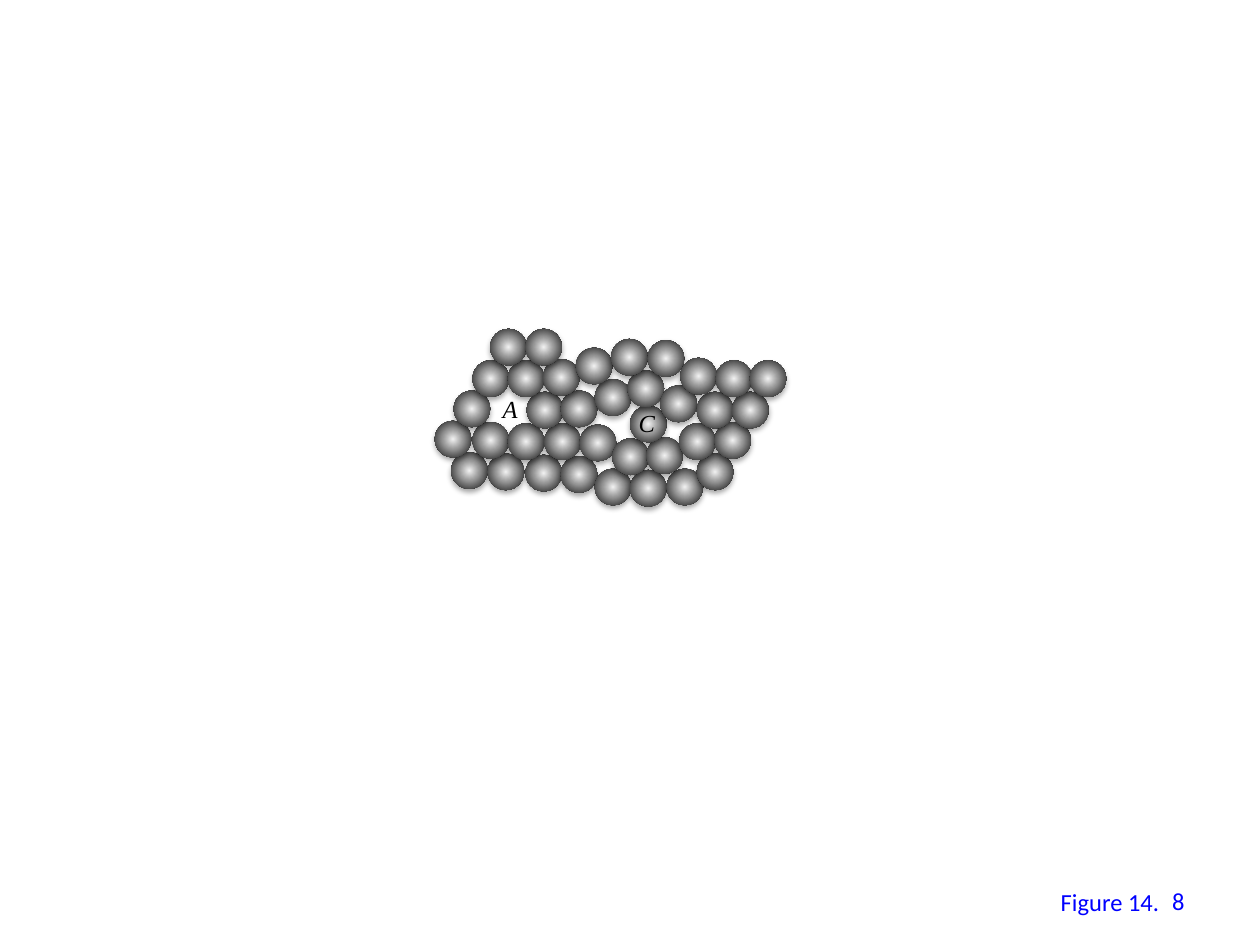
from lxml.etree import SubElement
from pptx import Presentation
from pptx.dml.color import RGBColor
from pptx.enum.shapes import MSO_SHAPE
from pptx.enum.text import MSO_ANCHOR, MSO_AUTO_SIZE, PP_ALIGN
from pptx.oxml.ns import qn
from pptx.util import Inches, Pt

COLORS = {"center": "F2F2F2", "rim": "0D0D0D", "shadow": "000000",
          "letter": "000000", "caption": "0000FF"}
ATOM_SIZE = 0.29

# Left and top of each atom, column by column, from bottom to top
ATOM_COLUMNS = [
    [(3.58, 3.59), (3.45, 3.34)],
    [(3.87, 3.6), (3.75, 3.35), (3.6, 3.1)],
    [(4.17, 3.61), (4.03, 3.36), (3.75, 2.86)],
    [(4.45, 3.62), (4.32, 3.36), (4.18, 3.11), (4.03, 2.86), (3.89, 2.61)],
    [(4.72, 3.72), (4.6, 3.37), (4.45, 3.1), (4.31, 2.85), (4.17, 2.61)],
    [(5, 3.73), (4.86, 3.48), (4.72, 3.01), (4.57, 2.76)],
    [(5.29, 3.72), (5.13, 3.47), (5, 3.22), (4.98, 2.94), (4.85, 2.69)],
    [(5.53, 3.6), (5.39, 3.36), (5.24, 3.06), (5.14, 2.7)],
    [(5.67, 3.35), (5.53, 3.11), (5.4, 2.84)],
    [(5.81, 3.11), (5.68, 2.86)],
    [(5.95, 2.86)],
]

LETTER = {"name": "Times New Roman", "size": Pt(14), "italic": True}
CAPTION = {"name": "Calibri", "size": Pt(14)}
FITTED = {"word_wrap": False, "auto_size": MSO_AUTO_SIZE.SHAPE_TO_FIT_TEXT}
CENTERED = {"word_wrap": True, "vertical_anchor": MSO_ANCHOR.MIDDLE}

# Text, box, font, colour, frame, alignment
LABELS = [
    ("Figure 14.", (8.32, 6.99, 0.99, 0.34), CAPTION, "caption", FITTED, PP_ALIGN.LEFT),
    ("C", (4.97, 3.19, 0.39, 0.34), LETTER, "letter", FITTED, PP_ALIGN.LEFT),
    ("A", (3.89, 3.08, 0.37, 0.34), LETTER, "letter", FITTED, PP_ALIGN.LEFT),
    ("8", (7.17, 6.95, 2.33, 0.4), CAPTION, "caption", CENTERED, PP_ALIGN.RIGHT),
]


def rgb(role):
    return RGBColor.from_string(COLORS[role])


def apply_format(target, values):
    for attribute, value in values.items():
        setattr(target, attribute, value)


def make_gradient_radial(gradient):
    gradient.remove(gradient.find(qn("a:lin")))
    path = SubElement(gradient, qn("a:path"), path="circle")
    SubElement(path, qn("a:fillToRect"), l="50000", t="50000", r="50000", b="50000")


def add_soft_shadow(effects):
    shadow = SubElement(effects, qn("a:outerShdw"), blurRad=str(Pt(3.1)),
                        dist=str(Pt(1.8)), dir="5400000", rotWithShape="0")
    color = SubElement(shadow, qn("a:srgbClr"), val=COLORS["shadow"])
    SubElement(color, qn("a:alpha"), val="35000")


def add_atom(slide, left, top):
    atom = slide.shapes.add_shape(MSO_SHAPE.OVAL, Inches(left), Inches(top),
                                  Inches(ATOM_SIZE), Inches(ATOM_SIZE))
    atom.line.fill.background()
    atom.fill.gradient()
    stops = zip(atom.fill.gradient_stops, (0, 0.99), ("center", "rim"))
    for stop, position, role in stops:
        stop.position = position
        stop.color.rgb = rgb(role)
    atom.shadow.inherit = False
    properties = atom.element.spPr
    make_gradient_radial(properties.find(qn("a:gradFill")))
    add_soft_shadow(properties.find(qn("a:effectLst")))


def add_label(slide, text, box, font, role, frame_format, alignment):
    frame = slide.shapes.add_textbox(*map(Inches, box)).text_frame
    apply_format(frame, frame_format)
    paragraph = frame.paragraphs[0]
    paragraph.alignment = alignment
    run = paragraph.add_run()
    run.text = text
    apply_format(run.font, font)
    run.font.color.rgb = rgb(role)


def main():
    presentation = Presentation()
    presentation.slide_width, presentation.slide_height = Inches(10), Inches(7.5)
    slide = presentation.slides.add_slide(presentation.slide_layouts[6])
    for column in ATOM_COLUMNS:
        for left, top in column:
            add_atom(slide, left, top)
    for label in LABELS:
        add_label(slide, *label)
    presentation.save("out.pptx")


if __name__ == "__main__":
    main()
